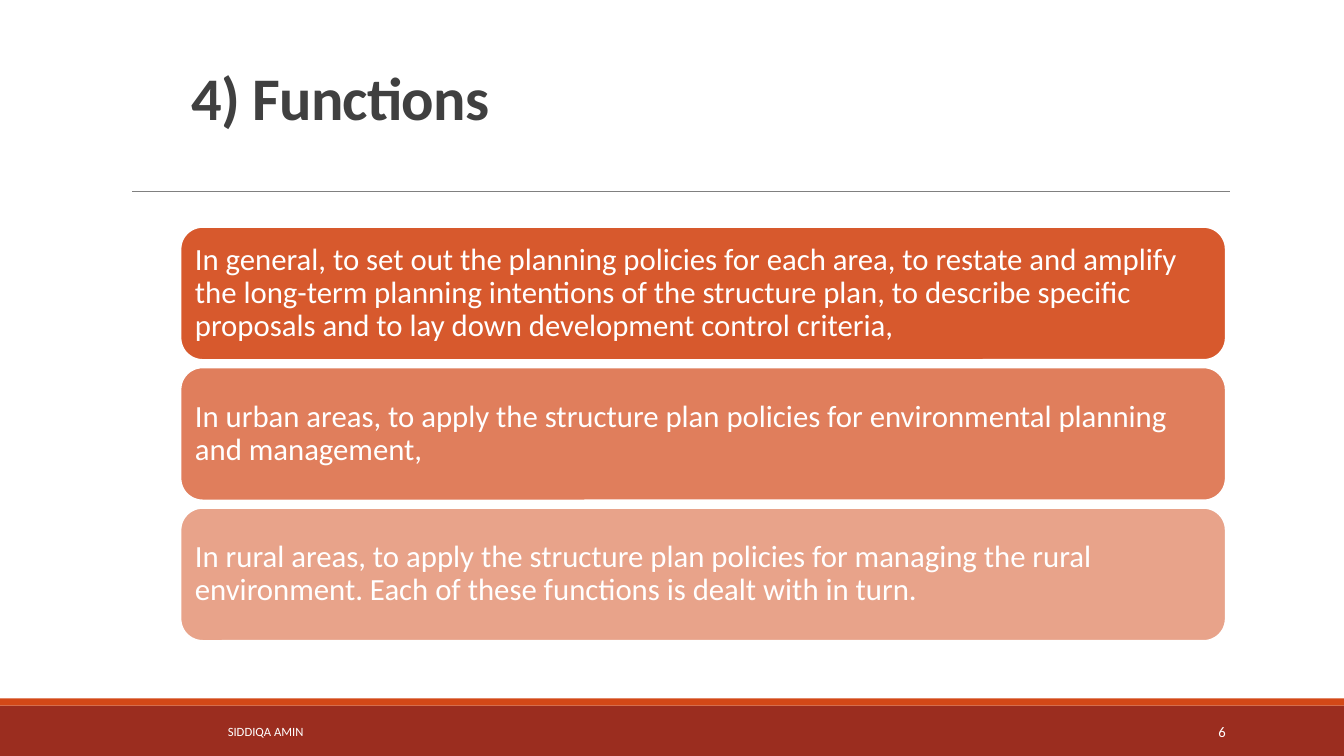
from lxml.etree import SubElement
from pptx import Presentation
from pptx.dml.color import RGBColor
from pptx.enum.shapes import MSO_CONNECTOR as Connector, MSO_SHAPE as Shape
from pptx.enum.text import MSO_ANCHOR as Anchor, MSO_AUTO_SIZE as AutoSize, PP_ALIGN as Align
from pptx.oxml.ns import qn
from pptx.util import Cm, Pt

WHITE = RGBColor(0xFF, 0xFF, 0xFF)
ORANGE = RGBColor(0xD3, 0x48, 0x17)
BRICK = RGBColor(0x9B, 0x2D, 0x1F)
GREY = RGBColor(0x80, 0x80, 0x80)
CHARCOAL = RGBColor(0x40, 0x40, 0x40)

WIDTH, HEIGHT = 33.87, 19.05
CARD_LEFT, CARD_TOP, CARD_WIDTH, CARD_HEIGHT = 4.55, 5.72, 26.34, 3.35
CARD_PITCH = 3.54

# Each function with the opacity of its card in percent
FUNCTIONS = [
    ("In general, to set out the planning policies for each area, to restate and amplify "
     "the long-term planning intentions of the structure plan, to describe specific "
     "proposals and to lay down development control criteria,", 90),
    ("In urban areas, to apply the structure plan policies for environmental planning "
     "and management,", 70),
    ("In rural areas, to apply the structure plan policies for managing the rural "
     "environment. Each of these functions is dealt with in turn.", 50),
]


class SlideBuilder:
    font_name = "Calibri"

    def __init__(self, slide):
        self.slide = slide

    def set_text(self, frame, text, size, color=WHITE, bold=False,
                 align=Align.LEFT, anchor=Anchor.MIDDLE, spacing=1.0):
        frame.text = text
        frame.word_wrap = True
        frame.auto_size = AutoSize.NONE
        frame.vertical_anchor = anchor
        paragraph = frame.paragraphs[0]
        paragraph.alignment = align
        paragraph.line_spacing = spacing
        run = paragraph.runs[0]
        font = run.font
        font.name, font.size, font.bold = self.font_name, Pt(size), bold
        font.color.rgb = color
        return run

    def title(self, text, left, top, width, height):
        heading = self.slide.shapes.title
        heading.left, heading.top = Cm(left), Cm(top)
        heading.width, heading.height = Cm(width), Cm(height)
        run = self.set_text(heading.text_frame, text, 43.2, CHARCOAL, bold=True,
                            anchor=Anchor.BOTTOM, spacing=0.85)
        run._r.get_or_add_rPr().set("spc", "-50")
        heading.text_frame.margin_bottom = Cm(1.7)

    def block(self, kind, left, top, width, height, color):
        block = self.slide.shapes.add_shape(kind, Cm(left), Cm(top), Cm(width), Cm(height))
        block.shadow.inherit = False
        block.fill.solid()
        block.fill.fore_color.rgb = color
        block.line.fill.background()
        return block

    def card(self, text, top, opacity):
        card = self.block(Shape.ROUNDED_RECTANGLE, CARD_LEFT, top,
                          CARD_WIDTH, CARD_HEIGHT, ORANGE)
        card.line.color.rgb = WHITE
        card.line.width = Pt(1.25)
        color = card._element.spPr.find(qn("a:solidFill"))[0]
        SubElement(color, qn("a:alpha"), val=str(opacity * 1000))
        frame = card.text_frame
        # The rounded corners add a little to the side margins
        frame.margin_left = frame.margin_right = Cm(0.2)
        self.set_text(frame, text, 22, spacing=0.9)

    def rule(self, left, right, y):
        rule = self.slide.shapes.add_connector(
            Connector.STRAIGHT, Cm(left), Cm(y), Cm(right), Cm(y))
        rule.line.color.rgb = GREY
        rule.line.width = Pt(0.5)
        SubElement(rule._element.spPr, qn("a:effectLst"))

    def label(self, text, left, width, size, align):
        label = self.slide.shapes.add_textbox(Cm(left), Cm(17.93), Cm(width), Cm(1.02))
        self.set_text(label.text_frame, text, size, align=align)


def main():
    deck = Presentation()
    deck.slide_width, deck.slide_height = Cm(WIDTH), Cm(HEIGHT)
    builder = SlideBuilder(deck.slides.add_slide(deck.slide_layouts[5]))

    # Footer bands and heading
    builder.block(Shape.RECTANGLE, 0, 17.78, WIDTH, HEIGHT - 17.78, BRICK)
    builder.block(Shape.RECTANGLE, 0, 17.6, WIDTH, 0.18, ORANGE)
    builder.rule(3.33, 30.99, 4.83)
    builder.title("4) Functions", 4.57, 1.5, 24.77, 3.55)

    # Function cards
    for index, (text, opacity) in enumerate(FUNCTIONS):
        builder.card(text, CARD_TOP + index * CARD_PITCH, opacity)

    # Footer texts
    builder.label("SIDDIQA AMIN", 0, 13.39, 9, Align.CENTER)
    builder.label("6", 27.51, 3.63, 10.5, Align.RIGHT)

    deck.save("out.pptx")


if __name__ == "__main__":
    main()
